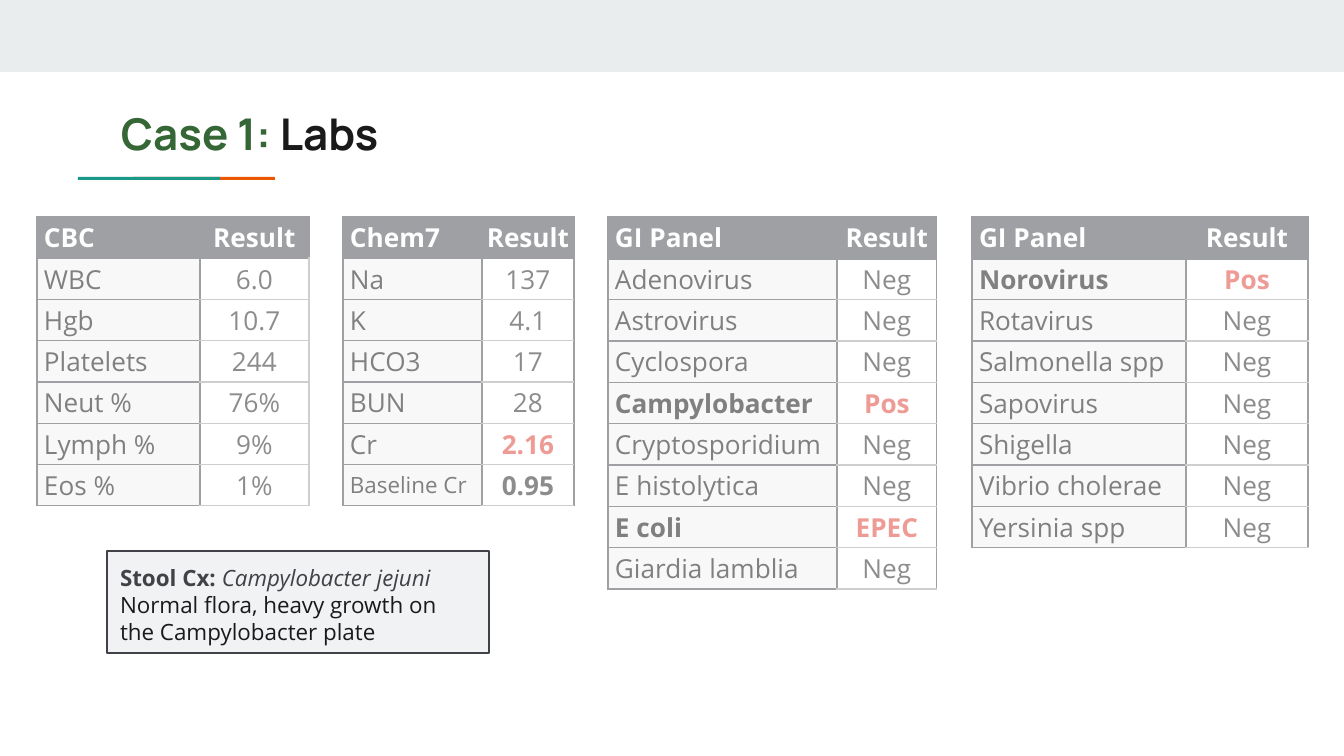
import pptx
import pptx.dml.color
import pptx.enum.shapes
import pptx.enum.text
import pptx.oxml
import pptx.oxml.ns
import pptx.util
import lxml.etree

SCALE = 914400 / 134.4
DARK, GREY, PALE = "404247", "9E9E9E", "F1F2F3"
INK, RED, WHITE = "1A1A1A", "DF382C", "FFFFFF"
HOT = {"2.16", "Pos", "EPEC"}
BOLD = HOT | {"0.95", "Campylobacter", "E coli", "Norovirus"}
SMALL = {"Baseline Cr"}

LABS = [
    ((37, 217, 272, 289), 163, GREY, [
        ("CBC", "Result"), ("WBC", "6.0"), ("Hgb", "10.7"), ("Platelets", "244"),
        ("Neut %", "76%"), ("Lymph %", "9%"), ("Eos %", "1%")]),
    ((343, 217, 231, 289), 139, DARK, [
        ("Chem7", "Result"), ("Na", "137"), ("K", "4.1"), ("HCO3", "17"),
        ("BUN", "28"), ("Cr", "2.16"), ("Baseline Cr", "0.95")]),
    ((608, 217, 329, 372), 229, DARK, [
        ("GI Panel", "Result"), ("Adenovirus", "Neg"), ("Astrovirus", "Neg"),
        ("Cyclospora", "Neg"), ("Campylobacter", "Pos"), ("Cryptosporidium", "Neg"),
        ("E histolytica", "Neg"), ("E coli", "EPEC"), ("Giardia lamblia", "Neg")]),
    ((972, 217, 336, 331), 214, DARK, [
        ("GI Panel", "Result"), ("Norovirus", "Pos"), ("Rotavirus", "Neg"),
        ("Salmonella spp", "Neg"), ("Sapovirus", "Neg"), ("Shigella", "Neg"),
        ("Vibrio cholerae", "Neg"), ("Yersinia spp", "Neg")]),
]


def px(size):
    """Turn px into EMU."""
    return pptx.util.Emu(round(size * SCALE))


def paint(form, shade):
    """Give a fill or font colour object a solid hex colour."""
    if hasattr(form, "solid"):
        form.solid()
        form = form.fore_color
    form.rgb = pptx.dml.color.RGBColor.from_string(shade)


def write(para, words, size=14, font="Open Sans", shade=INK, bold=False, slant=False):
    """Add a run of formatted text to a paragraph."""
    run = para.add_run()
    run.text = words
    run.font.size = pptx.util.Pt(size)
    run.font.name = font
    run.font.bold = bold
    run.font.italic = slant
    paint(run.font.color, shade)


def inset(frame, gap):
    """Wrap a text frame from the top with equal margins."""
    frame.word_wrap = True
    frame.vertical_anchor = pptx.enum.text.MSO_ANCHOR.TOP
    for side in ("left", "top", "right", "bottom"):
        setattr(frame, "margin_" + side, px(gap))


def block(slide, box, shade, line=None, alpha=None):
    """Draw a flat rectangle, outlined or see-through if asked."""
    kind = pptx.enum.shapes.MSO_SHAPE.RECTANGLE
    shape = slide.shapes.add_shape(kind, *map(px, box))
    shape.shadow.inherit = False
    paint(shape.fill, shade)
    if line:
        paint(shape.line.fill, line)
        shape.line.width = pptx.util.Pt(0.75)
    else:
        shape.line.fill.background()
    if alpha:
        tint = shape.fill._xPr.find(".//" + pptx.oxml.ns.qn("a:srgbClr"))
        node = lxml.etree.SubElement(tint, pptx.oxml.ns.qn("a:alpha"))
        node.set("val", str(alpha * 1000))
    return shape


def edge(cell, **sides):
    """Set cell borders from side=(colour, points)."""
    props = cell._tc.get_or_add_tcPr()
    for side in "LRTB":
        shade, width = sides[side]
        props.append(pptx.oxml.parse_xml(
            f'<a:ln{side} {pptx.oxml.ns.nsdecls("a")} w="{pptx.util.Pt(width)}">'
            f'<a:solidFill><a:srgbClr val="{shade}"/></a:solidFill></a:ln{side}>'))


def lab(slide, box, split, rim, rows):
    """Build one two-column lab table inside the box."""
    left, top, width, height = box
    table = slide.shapes.add_table(len(rows), 2, *map(px, box)).table
    table.first_row = table.horz_banding = False
    table.columns[0].width, table.columns[1].width = px(split), px(width - split)
    thin, thick = (DARK, 0.75), (DARK, 1.5)
    for i, row in enumerate(rows):
        table.rows[i].height = px(height / len(rows))
        for j, words in enumerate(row):
            cell = table.cell(i, j)
            head, soft = i == 0, (GREY, 0.75) if j else thin
            edge(cell, L=thin, R=(rim, 0.75) if j and not head else thin,
                 T=thin if head else thick if i == 1 else soft,
                 B=thick if head else soft)
            if head or j == 0:
                paint(cell.fill, DARK if head else PALE)
            else:
                cell.fill.background()
            cell.vertical_anchor = pptx.enum.text.MSO_ANCHOR.MIDDLE
            cell.margin_left = px(0 if j else 7)
            cell.margin_right = cell.margin_top = cell.margin_bottom = 0
            para = cell.text_frame.paragraphs[0]
            if j:
                para.alignment = pptx.enum.text.PP_ALIGN.CENTER
            shade = WHITE if head else RED if words in HOT else INK if j else "000000"
            write(para, words, size=12 if words in SMALL else 14, shade=shade,
                  bold=head or words in BOLD)


def header(slide, box):
    """Place the top band, the title and its two-tone rule."""
    left, top, width, height = box
    block(slide, (left, top, width, 72), "E9EDEE")
    for start, shade in ((133, "EB5600"), (78, "1A9988")):
        block(slide, (left + start, top + 177, 142, 3), shade)
    frame = slide.shapes.add_textbox(
        *map(px, (left + 108, top + 94, 1130, 79))).text_frame
    inset(frame, 13)
    para = frame.paragraphs[0]
    for words, shade in (("Case 1:", "356635"), (" Labs", INK)):
        write(para, words, size=23.4, font="Manrope", shade=shade, bold=True)


def note(slide, box):
    """Place the stool culture note."""
    frame = block(slide, box, PALE, line=DARK).text_frame
    inset(frame, 13)
    first, last = frame.paragraphs[0], frame.add_paragraph()
    first.alignment = last.alignment = pptx.enum.text.PP_ALIGN.LEFT
    write(first, "Stool Cx: ", size=12, shade=DARK, bold=True)
    write(first, "Campylobacter jejuni", size=12, shade=DARK, slant=True)
    write(last, "Normal flora, heavy growth on the Campylobacter plate", size=12)


def main():
    """Build the slide and save it."""
    deck = pptx.Presentation()
    deck.slide_width, deck.slide_height = px(1344), px(756)
    slide = deck.slides.add_slide(deck.slide_layouts[6])
    header(slide, (0, 0, 1344, 190))
    for item in LABS:
        lab(slide, *item)
    note(slide, (107, 551, 382, 102))
    for veil in ((22, 206, 564, 312), (598, 206, 720, 392)):
        block(slide, veil, WHITE, alpha=50)
    deck.save("out.pptx")


if __name__ == "__main__":
    main()
